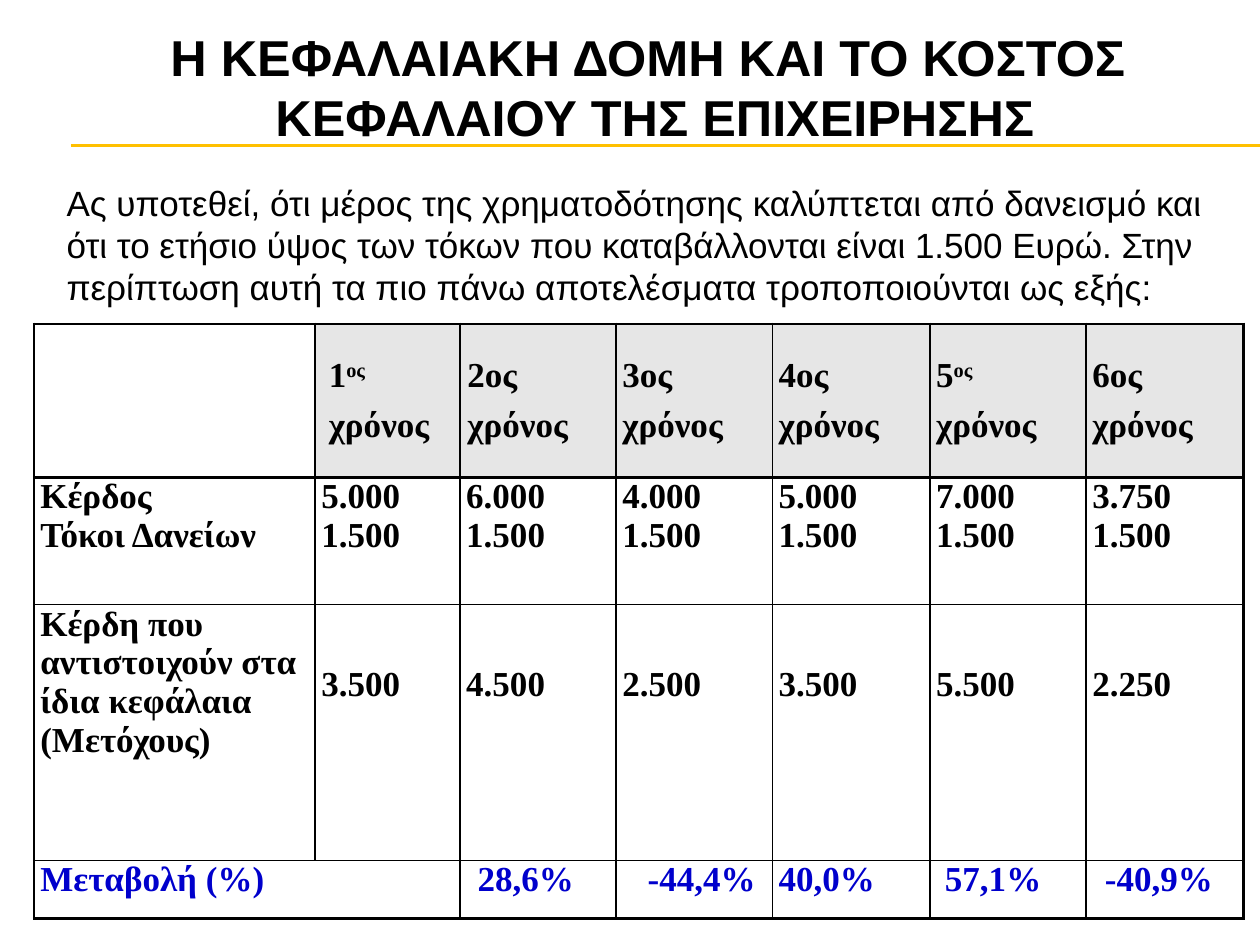
from dataclasses import dataclass

from lxml.etree import SubElement
from pptx import Presentation
from pptx.dml.color import RGBColor
from pptx.enum.shapes import MSO_CONNECTOR
from pptx.enum.text import MSO_ANCHOR, PP_ALIGN
from pptx.oxml.ns import qn
from pptx.util import Inches, Pt


@dataclass(frozen=True)
class Theme:
    sans: str = "Arial"
    serif: str = "Times New Roman"
    ink: str = "000000"
    blue: str = "0000CC"
    gold: str = "FFC000"
    gray: str = "E6E6E6"
    head: float = 28.8
    body: float = 20
    thin: float = 1
    thick: float = 1.5
    rule: float = 0.75


THEME = Theme()

TITLE = "Η ΚΕΦΑΛΑΙΑΚΗ ΔΟΜΗ ΚΑΙ ΤΟ ΚΟΣΤΟΣ \vΚΕΦΑΛΑΙΟΥ ΤΗΣ ΕΠΙΧΕΙΡΗΣΗΣ"
INTRO = (
    "Ας υποτεθεί, ότι μέρος της χρηματοδότησης καλύπτεται από δανεισμό και "
    "ότι το ετήσιο ύψος των τόκων που καταβάλλονται είναι 1.500 Ευρώ. Στην "
    "περίπτωση αυτή τα πιο πάνω αποτελέσματα τροποποιούνται ως εξής:"
)

# A caret marks the start of a raised ending.
YEARS = ["1^ος", "2ος", "3ος", "4ος", "5^ος", "6ος"]
PROFITS = ["5.000", "6.000", "4.000", "5.000", "7.000", "3.750"]
ROWS = [
    [""] + [f"{year}\nχρόνος" for year in YEARS],
    ["Κέρδος\nΤόκοι Δανείων"] + [f"{profit}\n1.500" for profit in PROFITS],
    ["Κέρδη που αντιστοιχούν στα ίδια κεφάλαια (Μετόχους)",
     "3.500", "4.500", "2.500", "3.500", "5.500", "2.250"],
    ["Μεταβολή (%)", "", "28,6%", "-44,4%", "40,0%", "57,1%", "-40,9%"],
]
WIDTHS = [2.23, 1.15, 1.24, 1.24, 1.25, 1.24, 1.25]
HEIGHTS = [1.22, 1.01, 2.03, 0.46]
INDENTS = {(0, 1): 0.06, (0, 2): 0.01, (3, 2): 0.09,
           (3, 3): 0.2, (3, 5): 0.07, (3, 6): 0.1}


def style(para, face, size, color, bold=False):
    for run in para.runs:
        font = run.font
        font.name, font.size, font.bold = face, Pt(size), bold
        font.color.rgb = RGBColor.from_string(color)


def add_text(slide, text, left, top, width, height, size, bold=False):
    box = slide.shapes.add_textbox(
        Inches(left), Inches(top), Inches(width), Inches(height))
    frame = box.text_frame
    frame.word_wrap = True
    para = frame.paragraphs[0]
    para.text = text
    style(para, THEME.sans, size, THEME.ink, bold)
    return frame


def add_rule(slide, top):
    line = slide.shapes.add_connector(
        MSO_CONNECTOR.STRAIGHT, Inches(0.56), Inches(top), Inches(10), Inches(top))
    line.line.color.rgb = RGBColor.from_string(THEME.gold)
    line.line.width = Pt(THEME.rule)
    SubElement(line._element.spPr, qn("a:effectLst"))


def raise_end(para):
    """Turn the part after a caret into superscript."""
    base, mark, end = para.text.partition("^")
    if mark:
        para.text = base
        run = para.add_run()
        run.text = end
        run._r.get_or_add_rPr().set("baseline", "30000")


def set_edges(cell, row, col):
    """Thick lines around the table and under its header, thin ones inside."""
    heavy = {
        "L": col == 0,
        "R": col + cell.span_width == len(WIDTHS),
        "T": row <= 1,
        "B": row in (0, len(HEIGHTS) - 1),
    }
    props = cell._tc.get_or_add_tcPr()
    for side, strong in heavy.items():
        width = Pt(THEME.thick if strong else THEME.thin)
        line = SubElement(props, qn(f"a:ln{side}"), w=str(width))
        fill = SubElement(line, qn("a:solidFill"))
        SubElement(fill, qn("a:srgbClr"), val=THEME.ink)


def fill_cell(cell, text, row, col):
    header = row == 0
    set_edges(cell, row, col)
    if header and col:
        cell.fill.solid()
        cell.fill.fore_color.rgb = RGBColor.from_string(THEME.gray)
    else:
        cell.fill.background()
    cell.margin_left = cell.margin_right = Inches(0.05)
    cell.margin_top = Inches(0.48 if row == 2 and col else 0)
    cell.margin_bottom = 0
    cell.vertical_anchor = MSO_ANCHOR.MIDDLE if header else MSO_ANCHOR.TOP
    cell.text_frame.text = text
    color = THEME.blue if row == 3 else THEME.ink
    for para in cell.text_frame.paragraphs:
        raise_end(para)
        style(para, THEME.serif, THEME.body, color, True)
        if header:
            para.space_before = para.space_after = Pt(3)
        indent = Inches(INDENTS.get((row, col), 0))
        para._p.get_or_add_pPr().set("marL", str(indent))


def add_grid(slide):
    frame = slide.shapes.add_table(
        len(HEIGHTS), len(WIDTHS), Inches(0.27), Inches(2.57),
        Inches(sum(WIDTHS)), Inches(sum(HEIGHTS)))
    table = frame.table
    table.first_row = table.horz_banding = False
    for col, width in zip(table.columns, WIDTHS):
        col.width = Inches(width)
    for row, height in zip(table.rows, HEIGHTS):
        row.height = Inches(height)
    table.cell(3, 0).merge(table.cell(3, 1))
    for row, texts in enumerate(ROWS):
        for col, text in enumerate(texts):
            cell = table.cell(row, col)
            if not cell.is_spanned:
                fill_cell(cell, text, row, col)


def main():
    deck = Presentation()
    deck.slide_width, deck.slide_height = Inches(10), Inches(7.5)
    slide = deck.slides.add_slide(deck.slide_layouts[6])
    for top in (1.15, 1.16):
        add_rule(slide, top)
    title = add_text(slide, TITLE, 0.2, 0.29, 10, 0.79, THEME.head, True)
    title.vertical_anchor = MSO_ANCHOR.MIDDLE
    title.paragraphs[0].alignment = PP_ALIGN.CENTER
    add_grid(slide)
    add_text(slide, INTRO, 0.43, 1.39, 9.3, 1.11, THEME.body)
    deck.save("out.pptx")


if __name__ == "__main__":
    main()
